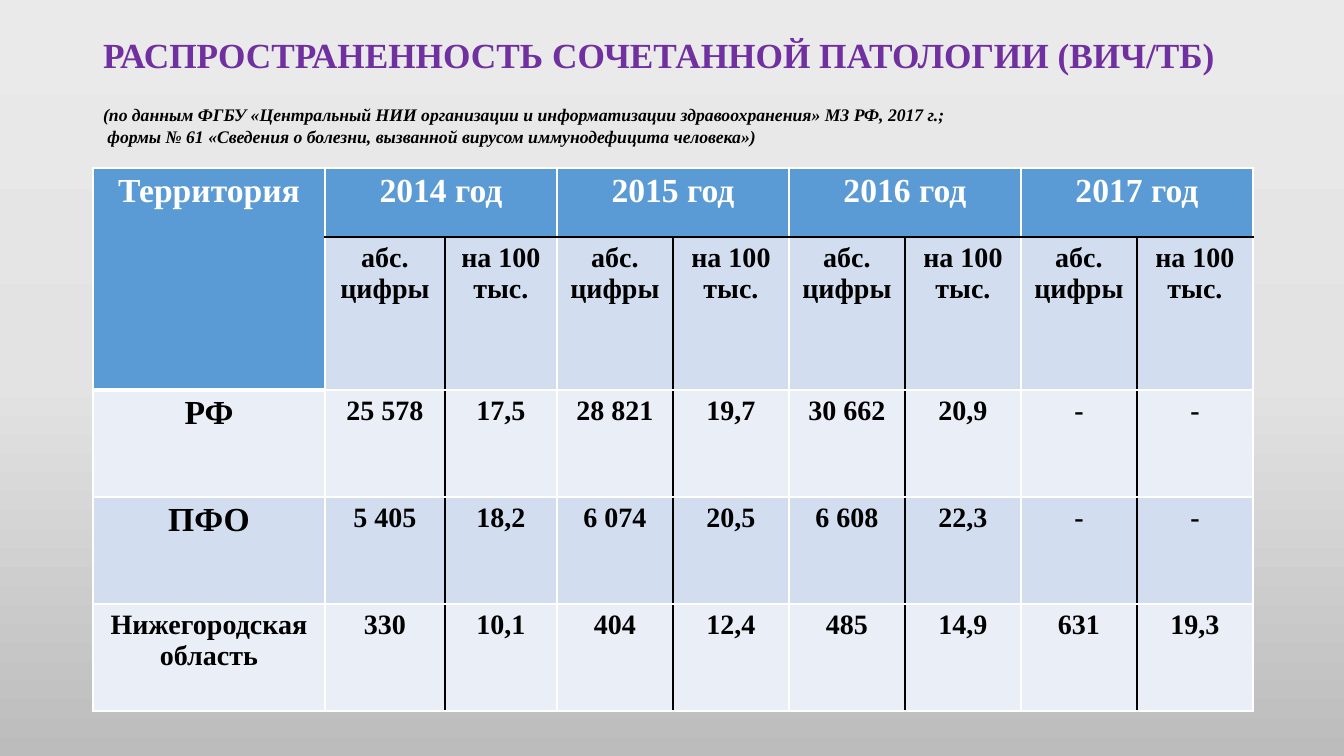
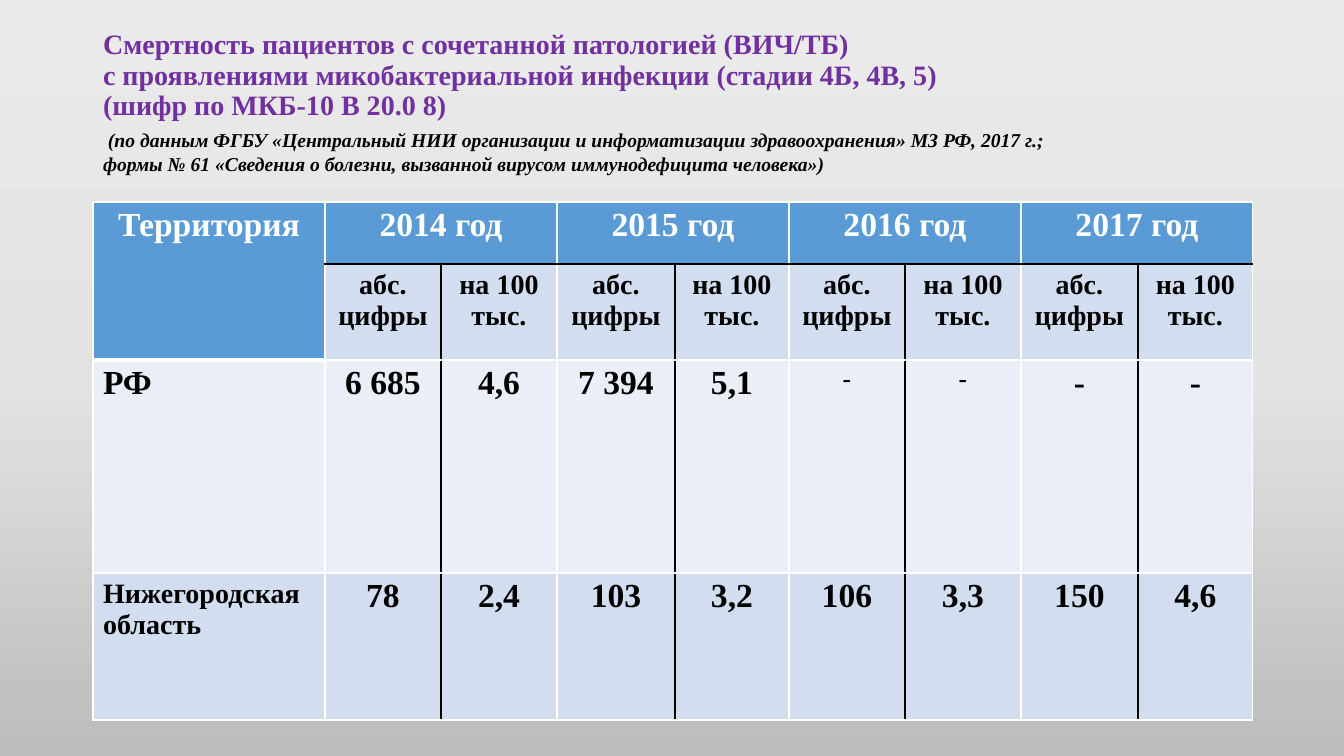
from copy import deepcopy

from lxml.etree import SubElement
from pptx import Presentation
from pptx.dml.color import RGBColor
from pptx.enum.text import MSO_ANCHOR, MSO_AUTO_SIZE, PP_ALIGN
from pptx.oxml.ns import qn
from pptx.util import Emu, Pt

# Shared look
FONT = "Times New Roman"
PURPLE = RGBColor(0x70, 0x30, 0xA0)
BLACK = RGBColor(0x00, 0x00, 0x00)
WHITE = RGBColor(0xFF, 0xFF, 0xFF)
HEADER = RGBColor(0x5B, 0x9B, 0xD5)
BAND_DARK = RGBColor(0xD2, 0xDE, 0xEF)
BAND_LIGHT = RGBColor(0xEA, 0xEF, 0xF7)
BACKGROUND = [RGBColor(0xEB, 0xEA, 0xEA), RGBColor(0xE4, 0xE3, 0xE3),
              RGBColor(0xBD, 0xBC, 0xBC)]
PX = 914400 / 100.8
LEFT, WIDTH = 93, 1159
YEARS = ["2014 год", "2015 год", "2016 год", "2017 год"]
MEASURES = [["абс.", "цифры"], ["на 100 тыс."]]

SLIDES = [
    {
        "title": ["РАСПРОСТРАНЕННОСТЬ СОЧЕТАННОЙ ПАТОЛОГИИ (ВИЧ/ТБ)"],
        "title_size": 25.2, "title_top": 21, "title_height": 143,
        "note": ["(по данным ФГБУ «Центральный НИИ организации и информатизации "
                 "здравоохранения» МЗ РФ, 2017 г.;",
                 " формы № 61 «Сведения о болезни, вызванной вирусом "
                 "иммунодефицита человека»)"],
        "note_size": 12.6, "note_gap": 20,
        "table_top": 168,
        "cols": [232, 120, 112, 116, 116, 116, 116, 116, 116],
        "rows": [69, 153, 107, 107, 107],
        "name_align": PP_ALIGN.CENTER, "value_size": 20, "small_cells": [],
        "data": [
            ("РФ", 24, ["25 578", "17,5", "28 821", "19,7", "30 662", "20,9", "-", "-"]),
            ("ПФО", 24, ["5 405", "18,2", "6 074", "20,5", "6 608", "22,3", "-", "-"]),
            ("Нижегородская область", 20,
             ["330", "10,1", "404", "12,4", "485", "14,9", "631", "19,3"]),
        ],
    },
    {
        "title": ["Смертность пациентов с сочетанной патологией (ВИЧ/ТБ)",
                  "с проявлениями микобактериальной инфекции (стадии 4Б, 4В, 5)",
                  "(шифр по МКБ-10 В 20.0 8)"],
        "title_size": 20, "title_top": 20, "title_height": 166,
        "note": [" (по данным ФГБУ «Центральный НИИ организации и информатизации "
                 "здравоохранения» МЗ РФ, 2017 г.;",
                 "формы № 61 «Сведения о болезни, вызванной вирусом "
                 "иммунодефицита человека»)"],
        "note_size": 14, "note_gap": 5,
        "table_top": 202,
        "cols": [232, 116, 116, 118, 114, 116, 116, 117, 115],
        "rows": [62, 96, 213, 147],
        "name_align": PP_ALIGN.LEFT, "value_size": 24, "small_cells": [(2, 5), (2, 6)],
        "data": [
            ("РФ", 24, ["6 685", "4,6", "7 394", "5,1", "-", "-", "-", "-"]),
            ("Нижегородская область", 20,
             ["78", "2,4", "103", "3,2", "106", "3,3", "150", "4,6"]),
        ],
    },
]


def px(n):
    return Emu(round(n * PX))


def add_lines(p, lines, size, color, align, italic=False):
    p.alignment = align
    for i, line in enumerate(lines):
        if i:
            p.add_line_break()
        r = p.add_run()
        r.text = line
        r.font.name = FONT
        r.font.size = Pt(size)
        r.font.bold = True
        r.font.italic = italic
        r.font.color.rgb = color


prs = Presentation()
prs.slide_width, prs.slide_height = px(1344), px(756)

# Gradient background on the master
fill = prs.slide_master.background.fill
fill.gradient()
fill.gradient_angle = 270
last = fill.gradient_stops[1]
gs_list = fill._fill._gradFill.find(qn("a:gsLst"))
gs_list.append(deepcopy(gs_list[-1]))
for i, (stop, color) in enumerate(zip(fill.gradient_stops, BACKGROUND)):
    stop.position = i / 2
    stop.color.rgb = color

for page in SLIDES:
    s = prs.slides.add_slide(prs.slide_layouts[5])

    # Title with source note
    sp = s.shapes.title
    sp.left, sp.top = px(LEFT), px(page["title_top"])
    sp.width, sp.height = px(WIDTH), px(page["title_height"])
    tf = sp.text_frame
    tf.word_wrap = True
    tf.auto_size = MSO_AUTO_SIZE.NONE
    tf.vertical_anchor = MSO_ANCHOR.MIDDLE
    p = tf.paragraphs[0]
    p.line_spacing = 0.9
    add_lines(p, page["title"], page["title_size"], PURPLE, PP_ALIGN.LEFT)
    p = tf.add_paragraph()
    p.line_spacing = 1.0
    p.space_before = Pt(page["note_gap"])
    add_lines(p, page["note"], page["note_size"], BLACK, PP_ALIGN.LEFT, italic=True)

    # Table grid
    cols, rows = page["cols"], page["rows"]
    table = s.shapes.add_table(len(rows), len(cols), px(LEFT), px(page["table_top"]),
                               px(WIDTH), px(sum(rows))).table
    table.first_row = table.horz_banding = False
    for c, width in enumerate(cols):
        table.columns[c].width = px(width)
    for r, height in enumerate(rows):
        table.rows[r].height = px(height)

    # Borders and fills
    for r in range(len(rows)):
        for c in range(len(cols)):
            cell = table.cell(r, c)
            borders = {"L": WHITE, "R": WHITE, "T": WHITE, "B": WHITE}
            if c and r == 0:
                borders["B"] = BLACK
            if c and r == 1:
                borders["T"] = BLACK
            if c and r:
                borders["R" if c % 2 else "L"] = BLACK
            tc_pr = cell._tc.get_or_add_tcPr()
            for side, color in borders.items():
                thick = c == 0 and r < 2 and side == "B"
                ln = SubElement(tc_pr, qn("a:ln" + side), w=str(Pt(3 if thick else 1)))
                solid = SubElement(ln, qn("a:solidFill"))
                SubElement(solid, qn("a:srgbClr"), val=str(color))
            cell.fill.solid()
            if r == 0 or (r == 1 and c == 0):
                cell.fill.fore_color.rgb = HEADER
            else:
                cell.fill.fore_color.rgb = BAND_DARK if r % 2 else BAND_LIGHT

    # Header rows
    table.cell(0, 0).merge(table.cell(1, 0))
    add_lines(table.cell(0, 0).text_frame.paragraphs[0], ["Территория"], 24, WHITE,
              PP_ALIGN.CENTER)
    for i, year in enumerate(YEARS):
        c = 1 + 2 * i
        table.cell(0, c).merge(table.cell(0, c + 1))
        add_lines(table.cell(0, c).text_frame.paragraphs[0], [year], 24, WHITE,
                  PP_ALIGN.CENTER)
        for j, measure in enumerate(MEASURES):
            tf = table.cell(1, c + j).text_frame
            for k, line in enumerate(measure):
                p = tf.add_paragraph() if k else tf.paragraphs[0]
                add_lines(p, [line], 20, BLACK, PP_ALIGN.CENTER)

    # Data rows
    for r, (name, name_size, values) in enumerate(page["data"], 2):
        add_lines(table.cell(r, 0).text_frame.paragraphs[0], [name], name_size, BLACK,
                  page["name_align"])
        for c, value in enumerate(values, 1):
            size = 18 if (r, c) in page["small_cells"] else page["value_size"]
            add_lines(table.cell(r, c).text_frame.paragraphs[0], [value], size, BLACK,
                      PP_ALIGN.CENTER)

prs.save("out.pptx")
